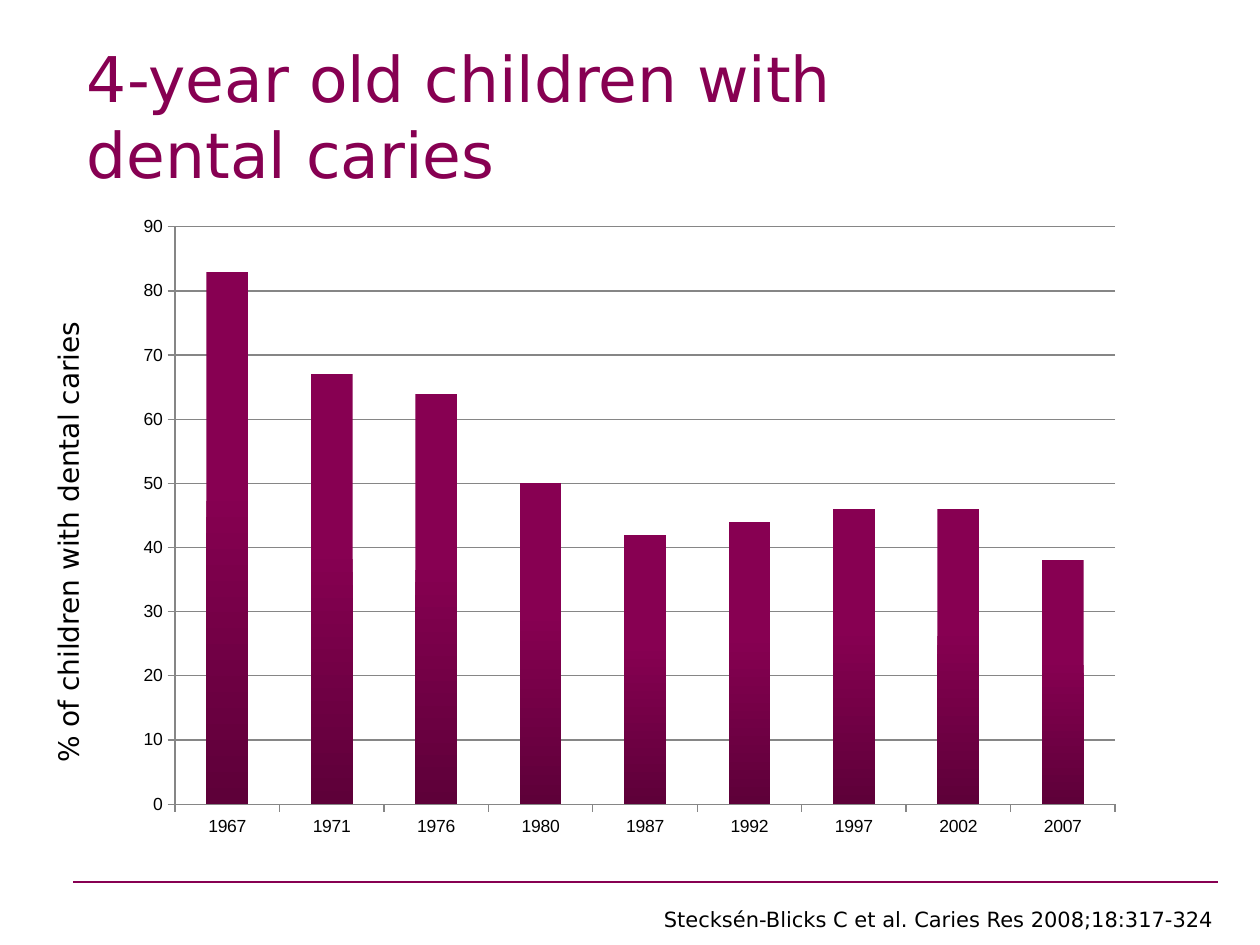
import pptx
import pptx.chart.data
import pptx.dml.color
import pptx.enum.chart
import pptx.enum.shapes
import pptx.enum.text
import pptx.oxml
import pptx.util

PLUM = pptx.dml.color.RGBColor(0x87, 0x00, 0x52)
DARK_PLUM = pptx.dml.color.RGBColor(0x5E, 0x00, 0x39)
BLACK = pptx.dml.color.RGBColor(0x00, 0x00, 0x00)
GRAY = pptx.dml.color.RGBColor(0x86, 0x86, 0x86)
TEXT_FONT = "DejaVu Sans"
CHART_FONT = "Arial"

deck = pptx.Presentation()
deck.slide_width = pptx.util.Inches(10)
deck.slide_height = pptx.util.Inches(7.5)
page = deck.slides.add_slide(deck.slide_layouts[5])


def area(left, top, width, height):
    """Turn shares of the slide, in percent, into lengths."""
    return (int(deck.slide_width * left / 100), int(deck.slide_height * top / 100),
            int(deck.slide_width * width / 100), int(deck.slide_height * height / 100))


def add_span(para, text, size, color):
    span = para.add_run()
    span.text = text
    span.font.name = TEXT_FONT
    span.font.size = pptx.util.Pt(size)
    span.font.color.rgb = color


# Title
title = page.shapes.title
title.left, title.top, title.width, title.height = area(5.9, 3.87, 92.9, 16.67)
title.text_frame.word_wrap = True
title.text_frame.vertical_anchor = pptx.enum.text.MSO_ANCHOR.MIDDLE
para = title.text_frame.paragraphs[0]
para.alignment = pptx.enum.text.PP_ALIGN.LEFT
add_span(para, "4-year old children with", 36, PLUM)
para.add_line_break()
add_span(para, "dental caries", 36, PLUM)

# Footer rule
left, top, width, height = area(5.8, 93.33, 90.9, 0)
rule = page.shapes.add_connector(
    pptx.enum.shapes.MSO_CONNECTOR.STRAIGHT, left, top, left + width, top)
rule.line.color.rgb = PLUM
rule.line.width = pptx.util.Pt(0.75)
rule._element.spPr.append(pptx.oxml.parse_xml(
    '<a:effectLst xmlns:a="http://schemas.openxmlformats.org/drawingml/2006/main"/>'))

# Chart of caries by year
chart_data = pptx.chart.data.CategoryChartData()
chart_data.categories = ["1967", "1971", "1976", "1980", "1987",
                         "1992", "1997", "2002", "2007"]
chart_data.add_series("Series 1", [83, 67, 64, 50, 42, 44, 46, 46, 38])
chart = page.shapes.add_chart(
    pptx.enum.chart.XL_CHART_TYPE.COLUMN_CLUSTERED,
    *area(9.8, 21.6, 80.3, 68.27), chart_data).chart
chart.has_legend = False
chart.has_title = False
chart.font.name = CHART_FONT
chart.font.size = pptx.util.Pt(10)
chart.font.color.rgb = BLACK

plot = chart.plots[0]
plot.gap_width = 150
plot.vary_by_categories = False
bar_fill = plot.series[0].format.fill
bar_fill.gradient()
bar_fill.gradient_angle = 270
for stop, color, position in zip(bar_fill.gradient_stops, (PLUM, DARK_PLUM), (0.4, 1)):
    stop.color.rgb = color
    stop.position = position

chart.value_axis.minimum_scale = 0
chart.value_axis.maximum_scale = 90
chart.value_axis.major_unit = 10
chart.value_axis.has_major_gridlines = True
for axis in (chart.category_axis, chart.value_axis):
    axis.major_tick_mark = pptx.enum.chart.XL_TICK_MARK.OUTSIDE
for lines in (chart.category_axis, chart.value_axis, chart.value_axis.major_gridlines):
    lines.format.line.color.rgb = GRAY
    lines.format.line.width = pptx.util.Pt(0.75)

# Axis caption and citation
for text, place, size, turn, alignment in (
    ("% of children with dental caries", (-13.5, 54.93, 37.8, 4.93), 16, 270,
     pptx.enum.text.PP_ALIGN.CENTER),
    ("Stecksén-Blicks C et al. Caries Res 2008;18:317-324", (51.7, 95.33, 47.2, 4), 12, 0,
     pptx.enum.text.PP_ALIGN.LEFT),
):
    box = page.shapes.add_textbox(*area(*place))
    box.rotation = turn
    box.text_frame.word_wrap = False
    box.text_frame.auto_size = pptx.enum.text.MSO_AUTO_SIZE.SHAPE_TO_FIT_TEXT
    para = box.text_frame.paragraphs[0]
    para.alignment = alignment
    add_span(para, text, size, BLACK)

deck.save("out.pptx")
